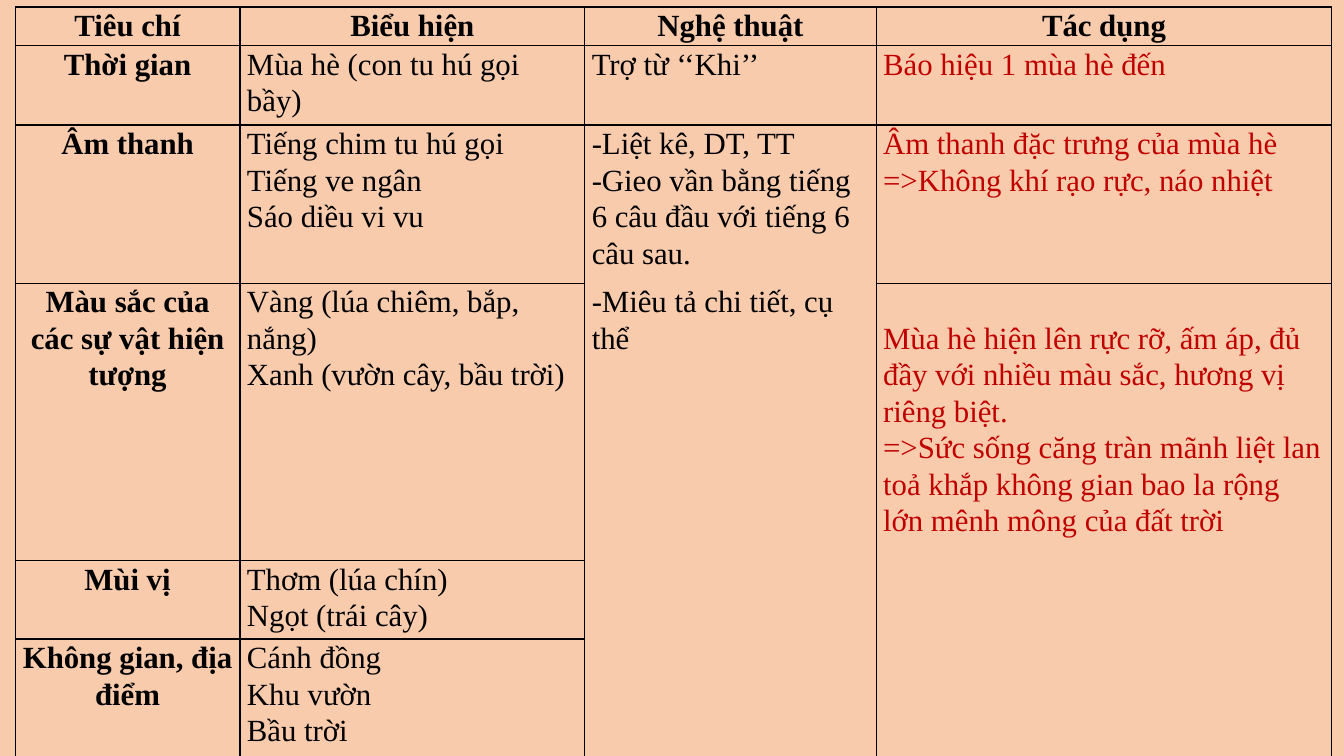
from lxml.etree import SubElement
from pptx import Presentation
from pptx.dml.color import RGBColor
from pptx.enum.text import PP_ALIGN
from pptx.oxml.ns import qn
from pptx.util import Inches, Pt

PEACH = RGBColor(0xF8, 0xCB, 0xAD)
BLACK = RGBColor(0x00, 0x00, 0x00)
RED = RGBColor(0xC0, 0x00, 0x00)

FONT = "Times New Roman"
LEFT, TOP = 0.15, 0.07
COLUMNS = [2.23, 3.42, 2.89, 4.52]
ROWS = [0.38, 0.79, 1.57, 2.75, 0.78, 1.17]
ART, EFFECT = 2, 3
OPEN_BELOW = {(2, ART), (3, ART), (4, ART), (3, EFFECT), (4, EFFECT)}
LOWERED = {(3, EFFECT): 0.36}

CONTENT = [
    [["Tiêu chí"], ["Biểu hiện"], ["Nghệ thuật"], ["Tác dụng"]],
    [["Thời gian"], ["Mùa hè (con tu hú gọi bầy)"], ["Trợ từ ‘‘Khi’’"],
     ["Báo hiệu 1 mùa hè đến"]],
    [["Âm thanh"],
     ["Tiếng chim tu hú gọi", "Tiếng ve ngân", "Sáo diều vi vu"],
     ["-Liệt kê, DT, TT",
      "-Gieo vần bằng tiếng 6 câu đầu với tiếng 6 câu sau."],
     ["Âm thanh đặc trưng của mùa hè", "=>Không khí rạo rực, náo nhiệt"]],
    [["Màu sắc của các sự vật hiện tượng"],
     ["Vàng (lúa chiêm, bắp, nắng)", "Xanh (vườn cây, bầu trời)"],
     ["-Miêu tả chi tiết, cụ thể"],
     ["Mùa hè hiện lên rực rỡ, ấm áp, đủ đầy với nhiều màu sắc, "
      "hương vị riêng biệt.",
      "=>Sức sống căng tràn mãnh liệt lan toả khắp không gian bao la rộng "
      "lớn mênh mông của đất trời"]],
    [["Mùi vị"], ["Thơm (lúa chín)", "Ngọt (trái cây)"], [], []],
    [["Không gian, địa điểm"], ["Cánh đồng", "Khu vườn", "Bầu trời"], [], []],
]


def set_borders(cell, row, column):
    """Draw the cell's black edges, leaving the joined rows open."""
    properties = cell._tc.get_or_add_tcPr()
    hidden = {"lnT": (row - 1, column) in OPEN_BELOW,
              "lnB": (row, column) in OPEN_BELOW}
    for place, edge in enumerate(("lnL", "lnR", "lnT", "lnB")):
        line = SubElement(properties, qn(f"a:{edge}"), w=str(Pt(1)))
        if hidden.get(edge):
            SubElement(line, qn("a:noFill"))
        else:
            fill = SubElement(line, qn("a:solidFill"))
            SubElement(fill, qn("a:srgbClr"), val=str(BLACK))
        properties.insert(place, line)


def write_lines(cell, lines, heading, color):
    """Write one paragraph per line into the cell."""
    frame = cell.text_frame
    for number, line in enumerate(lines):
        para = frame.add_paragraph() if number else frame.paragraphs[0]
        para.alignment = PP_ALIGN.CENTER if heading else PP_ALIGN.LEFT
        para.line_spacing = 1.07
        span = para.add_run()
        span.text = line
        span.font.name = FONT
        span.font.size = Pt(22)
        span.font.bold = heading
        span.font.color.rgb = color


def add_criteria_table(page):
    """Add the table of criteria with its sizes, edges and text."""
    table = page.shapes.add_table(
        len(ROWS), len(COLUMNS), Inches(LEFT), Inches(TOP),
        Inches(sum(COLUMNS)), Inches(sum(ROWS))).table
    for column, width in zip(table.columns, COLUMNS):
        column.width = Inches(width)
    for row, height in zip(table.rows, ROWS):
        row.height = Inches(height)
    for row, entries in enumerate(CONTENT):
        for column, lines in enumerate(entries):
            cell = table.cell(row, column)
            cell.margin_left = cell.margin_right = Inches(0.07)
            cell.margin_top = Inches(LOWERED.get((row, column), 0))
            cell.margin_bottom = 0
            cell.fill.background()
            set_borders(cell, row, column)
            color = RED if row and column == EFFECT else BLACK
            write_lines(cell, lines, row == 0 or column == 0, color)


def main():
    """Build the slide and save the deck."""
    deck = Presentation()
    deck.slide_width, deck.slide_height = Inches(13.33), Inches(7.5)
    page = deck.slides.add_slide(deck.slide_layouts[6])
    page.background.fill.solid()
    page.background.fill.fore_color.rgb = PEACH
    add_criteria_table(page)
    deck.save("out.pptx")


if __name__ == "__main__":
    main()
